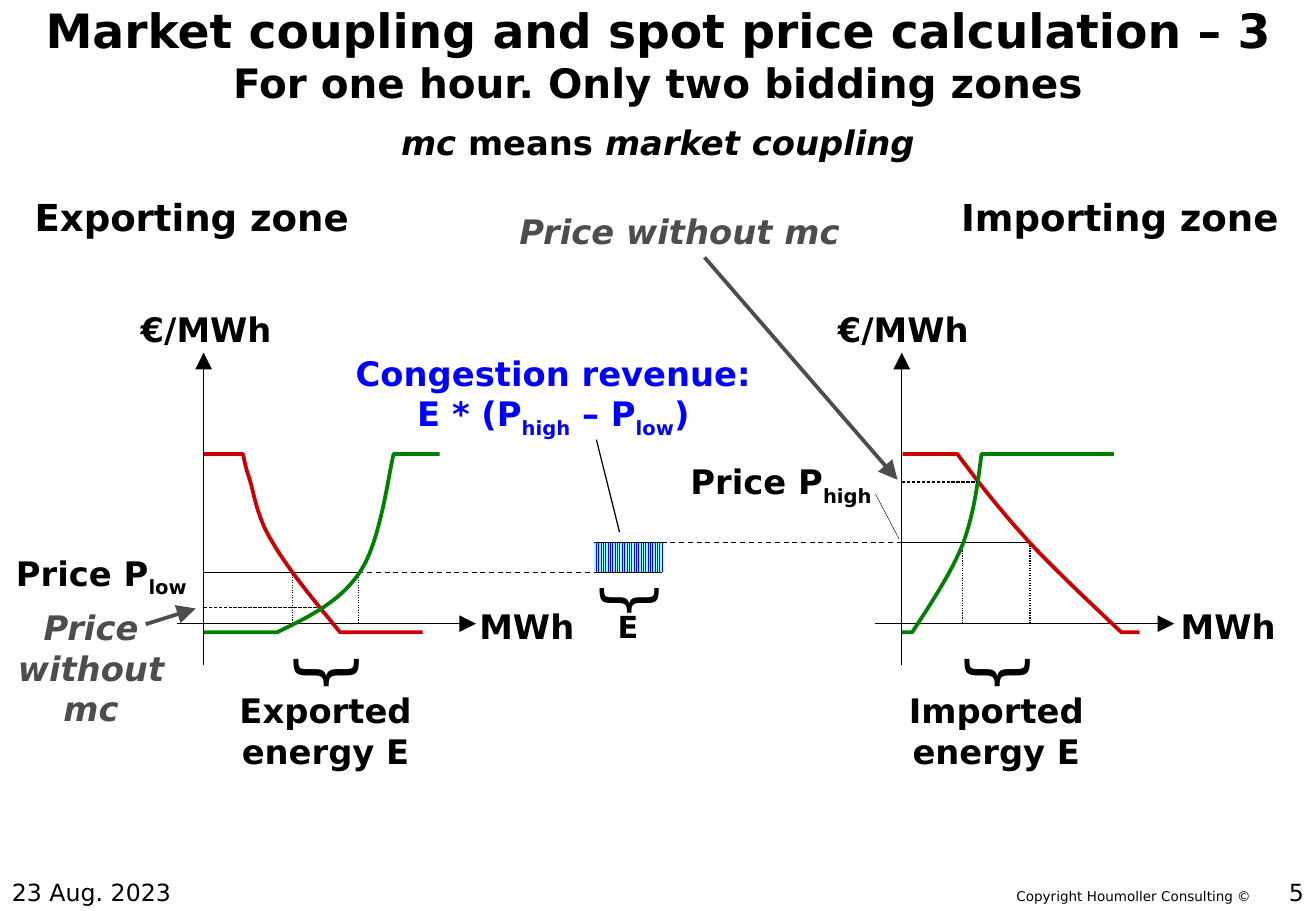
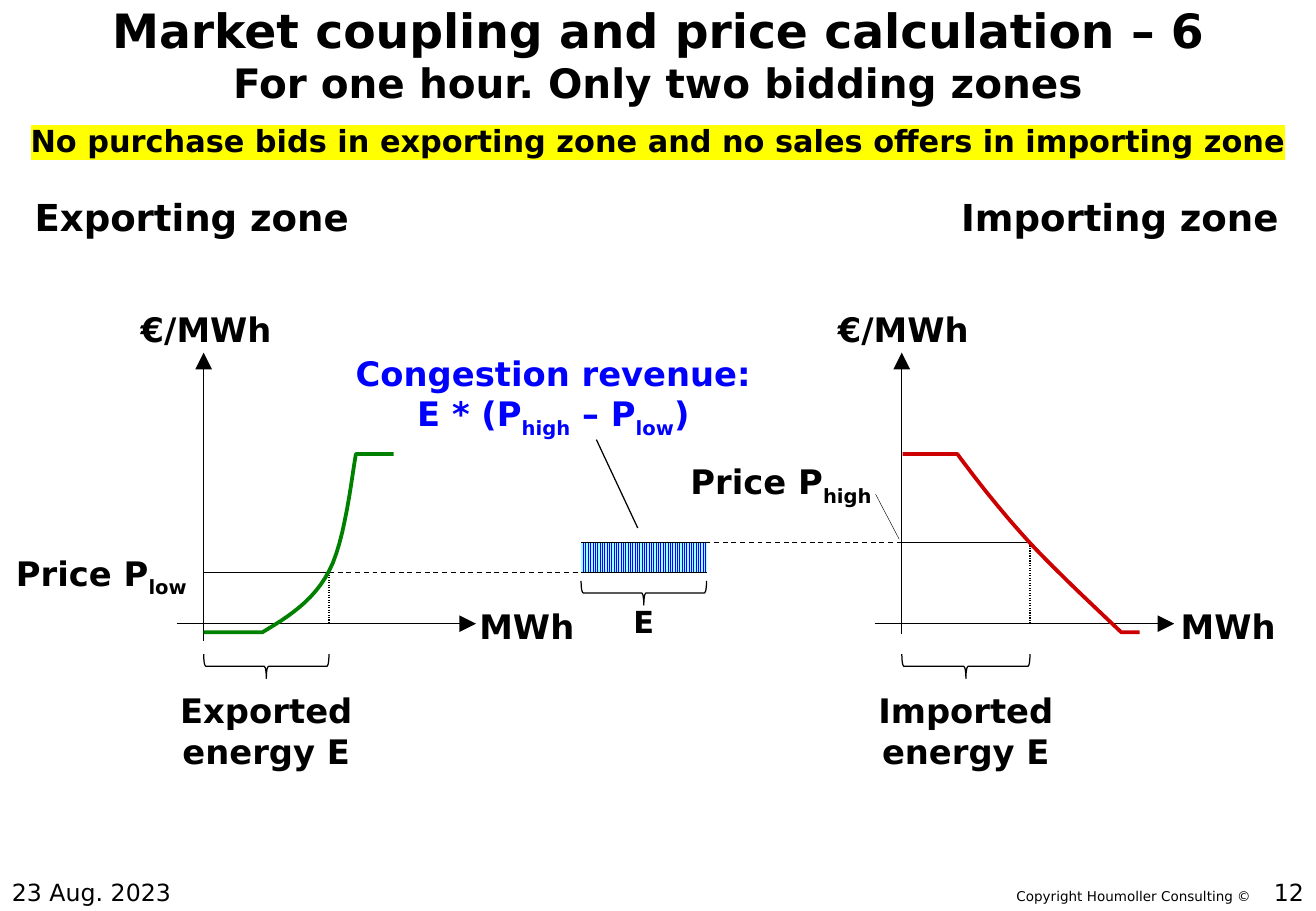
"""Build two slides on market coupling between an exporting and an importing zone."""
from pptx import Presentation
from pptx.dml.color import RGBColor
from pptx.enum import dml, shapes, text
from pptx.oxml import ns
from pptx.util import Pt
from lxml import etree


class Theme:
    font = "DejaVu Sans"
    black, white, grey, blue = "000000", "FFFFFF", "4D4D4D", "0000FF"
    red, green, aqua, yellow = "CC0000", "008000", "99FFFF", "FFFF00"
    head, sub, zone, body, small, date, note = 28, 24, 22, 20, 18, 14, 8
    thick, thin, hair = 2.25, 0.75, 0.25
    lead = 1.165


DASH = dml.MSO_LINE
STYLES = {
    "solid": (Theme.black, Theme.thin, None, False),
    "hair": (Theme.black, Theme.hair, None, False),
    "axis": (Theme.black, Theme.thin, None, True),
    "dash": (Theme.black, Theme.thin, DASH.DASH, False),
    "dots": (Theme.black, Theme.thin, DASH.ROUND_DOT, False),
    "short": (Theme.black, Theme.thin, DASH.SQUARE_DOT, False),
    "arrow": (Theme.grey, Theme.thick, None, True),
}

LEFT, RIGHT = 120.7, 534.5
TOP, BASE = 209, 369.7
HIGH, LOW = 321.8, 339.2
CAP, FLOOR = 269.1, 374.8
MID = 390

SUBHEAD = "For one hour. Only two bidding zones"
DATE = "23 Aug. 2023"
RIGHTS = "Copyright Houmoller Consulting ©"

LABELS = [
    ("Exporting zone", 113.6, 111.6, 204, {"size": Theme.zone}),
    ("Importing zone", 663.8, 111.6, 208, {"size": Theme.zone}),
    ("€/MWh", 122.2, 179.4, 100, {}),
    ("€/MWh", 535.4, 179.7, 100, {}),
    ("MWh", 312.3, 355.3, 72, {}),
    ("MWh", 728, 355.3, 72, {}),
    ("Price P_low", 60.1, 324, 120, {}),
    ("Price P_high", 463, 269.7, 127, {}),
    ("Congestion revenue:\nE * (P_high_ – P_low_)", 328, 205.4, 252, {"color": Theme.blue}),
]
FAINT = {"color": Theme.grey, "italic": True}

DEMAND = (Theme.red, [(535, CAP), (567.4, CAP), (580.3, 286.6), (594, 303.8), (609.8, 321.1),
                      (626.4, 339.1), (655.9, 366.5), (664.6, FLOOR), (675.4, FLOOR)])

SLIDES = [
    {
        "title": "Market coupling and spot price calculation – 3",
        "page": "5",
        "labels": [
            ("~mc~ means ~market coupling~", MID, 68.4, 321, {}),
            ("Price\nwithout\nmc", 54, 356.4, 102, FAINT),
            ("Price without mc", 402.8, 121.3, 207, FAINT),
        ],
        "lines": [
            (86.4, 370, 116, 360.7, "arrow"),
            (417.6, 152.6, 532, 284.4, "arrow"),
            (LEFT, 360.2, 188, 360.2, "short"),
            (RIGHT, 285.7, 579, 285.7, "short"),
            (353.5, 260.6, 367.2, 315.4, "solid"),
        ],
        "curves": [
            (Theme.red, [(LEFT, CAP), (144, CAP), (144.7, 271.4), (144.7, 274.3), (147.6, 283),
                         (150.5, 291.6), (151.9, 306), (161.3, 321.1), (169.9, 336.2),
                         (185.8, 355.7), (201.6, FLOOR), (250.5, FLOOR)]),
            (Theme.green, [(LEFT, FLOOR), (164.2, FLOOR), (182.9, 365.8), (202.3, 356.4),
                           (213.8, 338.4), (225.4, 321.1), (230.4, 280.8), (233.3, CAP),
                           (260.6, CAP)]),
            DEMAND,
            (Theme.green, [(RIGHT, FLOOR), (540.7, FLOOR), (552.2, 357.1), (563.8, 339.8),
                           (571, 321.8), (577.4, 303.8), (579.6, 286.6), (581.8, CAP),
                           (660.2, CAP)]),
        ],
        "out": (173.5, 212.5), "into": (570.7, 610.5), "slab": (352.1, 392.4),
        "feet": (394, 394), "etop": 357, "glyph": True,
    },
    {
        "title": "Market coupling and price calculation – 6",
        "page": "12",
        "labels": [
            ("No purchase bids in exporting zone and no sales offers in importing zone",
             MID, 69, 774, {"size": Theme.small, "mark": Theme.yellow}),
        ],
        "lines": [(353.5, 260.6, 378, 313, "solid")],
        "curves": [
            (Theme.green, [(LEFT, FLOOR), (155.5, FLOOR), (170.6, 365.8), (185.8, 356.4),
                           (195.1, 338.4), (204.5, 321.1), (208.8, 280.8), (211, CAP),
                           (233.3, CAP)]),
            DEMAND,
        ],
        "out": (LEFT, 195), "into": (RIGHT, 610.5), "slab": (344.4, 418.8),
        "feet": (380, 376), "etop": 354.2, "glyph": False,
    },
]


def rgb(code):
    return RGBColor.from_string(code)


def style(run, size, color=Theme.black, bold=False, italic=False):
    font = run.font
    font.name, font.size, font.bold, font.italic = Theme.font, Pt(size), bold, italic
    font.color.rgb = rgb(color)


def shade(run, color):
    props = run.font._element
    mark = etree.Element(ns.qn("a:highlight"))
    etree.SubElement(mark, ns.qn("a:srgbClr")).set("val", color)
    props.find(ns.qn("a:latin")).addprevious(mark)


def box(slide, x, y, w, h, words, size, wrap=True, align="LEFT", anchor="TOP"):
    shape = slide.shapes.add_textbox(Pt(x), Pt(y), Pt(w), Pt(h))
    frame = shape.text_frame
    frame.word_wrap = wrap
    if not wrap:
        frame.auto_size = text.MSO_AUTO_SIZE.SHAPE_TO_FIT_TEXT
    frame.vertical_anchor = text.MSO_ANCHOR[anchor]
    frame.text = words
    for para in frame.paragraphs:
        para.alignment = text.PP_ALIGN[align]
        for run in para.runs:
            style(run, size)
    return shape


def label(slide, words, mid, y, w, size=Theme.body, color=Theme.black, italic=False, mark=None):
    rows = words.split("\n")
    high = len(rows) * size * Theme.lead + 7.2
    frame = box(slide, mid - w / 2, y, w, high, words, size, False, "CENTER").text_frame
    for para, row in zip(frame.paragraphs, rows):
        sign = "~" if "~" in row else "_"
        para.text = ""
        for i, piece in enumerate(row.split(sign)):
            if not piece:
                continue
            run = para.add_run()
            run.text = piece
            odd = i % 2 == 1
            style(run, size, color, True, italic or (odd and sign == "~"))
            if odd and sign == "_":
                run.font._element.set("baseline", "-25000")
            if mark:
                shade(run, mark)


def line(slide, x1, y1, x2, y2, kind):
    color, width, dash, arrow = STYLES[kind]
    link = slide.shapes.add_connector(shapes.MSO_CONNECTOR.STRAIGHT, Pt(x1), Pt(y1), Pt(x2), Pt(y2))
    link.line.color.rgb, link.line.width = rgb(color), Pt(width)
    if dash:
        link.line.dash_style = dash
    props = link._element.spPr
    if arrow:
        tail = etree.SubElement(props.find(ns.qn("a:ln")), ns.qn("a:tailEnd"))
        for key, value in (("type", "triangle"), ("w", "lg"), ("len", "lg")):
            tail.set(key, value)
    etree.SubElement(props, ns.qn("a:effectLst"))


def bend(pts, steps=12):
    out = [pts[0]]
    for a, b, c, d in zip(pts[0::3], pts[1::3], pts[2::3], pts[3::3]):
        for i in range(1, steps + 1):
            t = i / steps
            s = 1 - t
            out.append(tuple(s**3 * p + 3 * s * s * t * q + 3 * s * t * t * r + t**3 * e
                             for p, q, r, e in zip(a, b, c, d)))
    return out


def curve(slide, color, pts):
    spots = [(Pt(x), Pt(y)) for x, y in [pts[0], *bend(pts[1:-1]), pts[-1]]]
    form = slide.shapes.build_freeform(*spots[0])
    form.add_line_segments(spots[1:], close=False)
    shape = form.convert_to_shape()
    shape.shadow.inherit = False
    shape.fill.background()
    shape.line.color.rgb, shape.line.width = rgb(color), Pt(Theme.thick)


def brace(slide, span, y, glyph, size):
    mid = sum(span) / 2
    if glyph:
        w, h = 28.8, size * Theme.lead + 9.2
        shape = box(slide, mid + 4.5 - w / 2, y - h / 2, w, h, "}", size, align="CENTER")
    else:
        w, h = 14.4, span[1] - span[0]
        shape = slide.shapes.add_shape(shapes.MSO_SHAPE.RIGHT_BRACE,
                                       Pt(mid - w / 2), Pt(y - h / 2), Pt(w), Pt(h))
        shape.shadow.inherit = False
        shape.fill.background()
        shape.line.color.rgb, shape.line.width = rgb(Theme.black), Pt(Theme.thin)
    shape.rotation = 90


def slab(slide, start, end):
    shape = slide.shapes.add_shape(shapes.MSO_SHAPE.RECTANGLE,
                                   Pt(start), Pt(HIGH), Pt(end - start), Pt(LOW - HIGH))
    shape.shadow.inherit = False
    shape.line.fill.background()
    shape.fill.patterned()
    shape.fill.pattern = dml.MSO_PATTERN.NARROW_VERTICAL
    shape.fill.fore_color.rgb, shape.fill.back_color.rgb = rgb(Theme.blue), rgb(Theme.aqua)
    for y in (HIGH, LOW):
        line(slide, start, y, end, y, "solid")


def frame(slide, title, page):
    head = slide.shapes.title
    head.left, head.top, head.width, head.height = Pt(0), Pt(0.8), Pt(780), Pt(62)
    head.fill.solid()
    head.fill.fore_color.rgb = rgb(Theme.white)
    body = head.text_frame
    body.auto_size, body.vertical_anchor = text.MSO_AUTO_SIZE.NONE, text.MSO_ANCHOR.MIDDLE
    para = body.paragraphs[0]
    para.text = title + "\v" + SUBHEAD
    para.alignment = text.PP_ALIGN.CENTER
    for run, size in zip(para.runs, (Theme.head, Theme.sub)):
        style(run, size, bold=True)
    box(slide, 595.4, 522.7, 155.5, 17.3, RIGHTS, Theme.note, wrap=False)
    box(slide, 0, 510.5, 162.7, 36, DATE, Theme.date, anchor="MIDDLE")
    box(slide, 617.3, 510.5, 162.7, 36, page, Theme.date, align="RIGHT", anchor="MIDDLE")


def market(slide, data):
    for x, foot in zip((LEFT, RIGHT), data["feet"]):
        line(slide, x, foot, x, TOP, "axis")
        line(slide, x - 16, BASE, x + 161.5, BASE, "axis")
    out, into, rent = data["out"], data["into"], data["slab"]
    line(slide, LEFT, LOW, out[1], LOW, "solid")
    line(slide, RIGHT, HIGH, into[1], HIGH, "solid")
    line(slide, 519, 293, 533, 319.7, "hair")
    line(slide, out[1], LOW, rent[0], LOW, "dash")
    line(slide, RIGHT, HIGH, rent[1], HIGH, "dash")
    sides = ((out, LOW, LEFT, "Exported", 117), (into, HIGH, RIGHT, "Imported", 122))
    for span, price, axis, word, w in sides:
        for x in span:
            if x != axis:
                line(slide, x, price, x, BASE, "dots")
        brace(slide, span, 393 if data["glyph"] else 395, data["glyph"], 42)
        label(slide, word + "\nenergy E", sum(span) / 2, 405.4, w)
    slab(slide, *rent)
    brace(slide, rent, 351.5, data["glyph"], 38)
    label(slide, "E", sum(rent) / 2, data["etop"], 27, Theme.small)


def main():
    deck = Presentation()
    deck.slide_width, deck.slide_height = Pt(780), Pt(540)
    for props in deck.slide_master.element.findall(".//" + ns.qn("p:titleStyle") + "//" + ns.qn("a:defRPr")):
        props.set("sz", str(Theme.head * 100))
    for data in SLIDES:
        slide = deck.slides.add_slide(deck.slide_layouts[5])
        frame(slide, data["title"], data["page"])
        for words, mid, y, w, look in LABELS + data["labels"]:
            label(slide, words, mid, y, w, **look)
        market(slide, data)
        for color, pts in data["curves"]:
            curve(slide, color, pts)
        for item in data["lines"]:
            line(slide, *item)
    deck.save("out.pptx")


if __name__ == "__main__":
    main()
